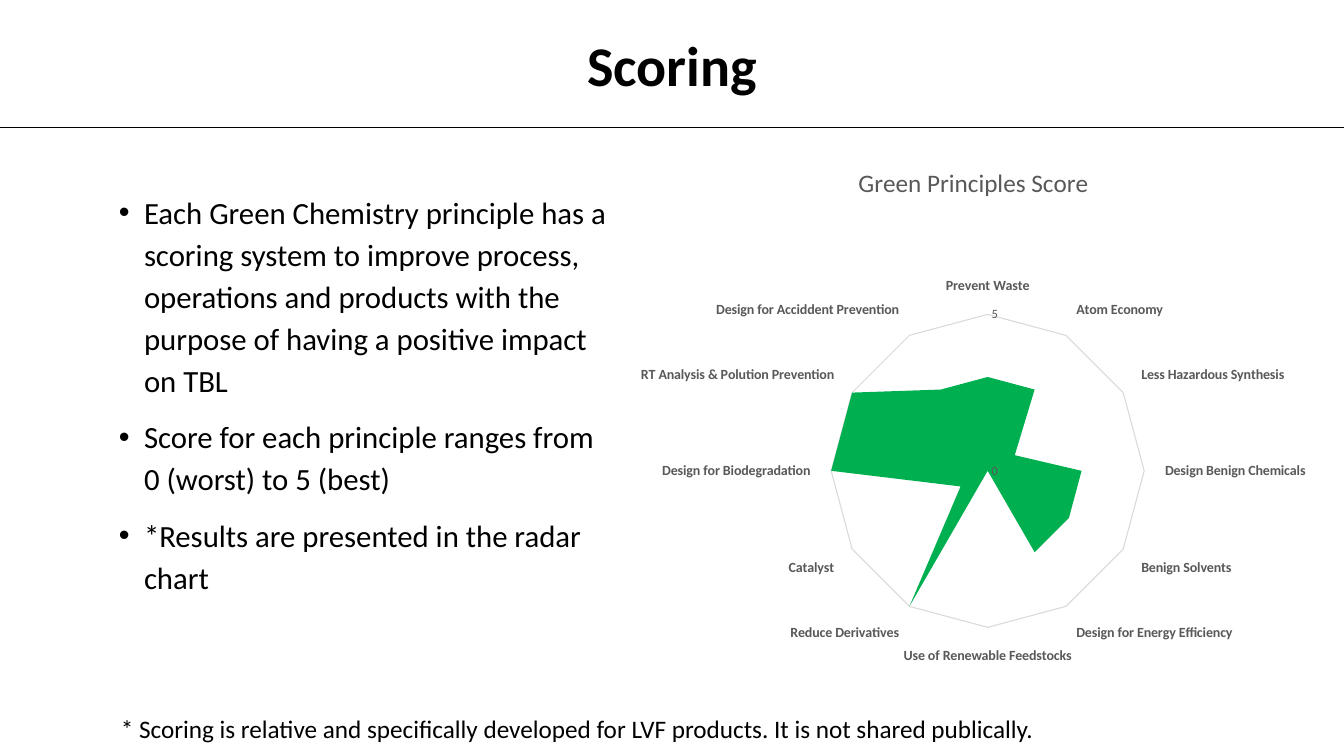
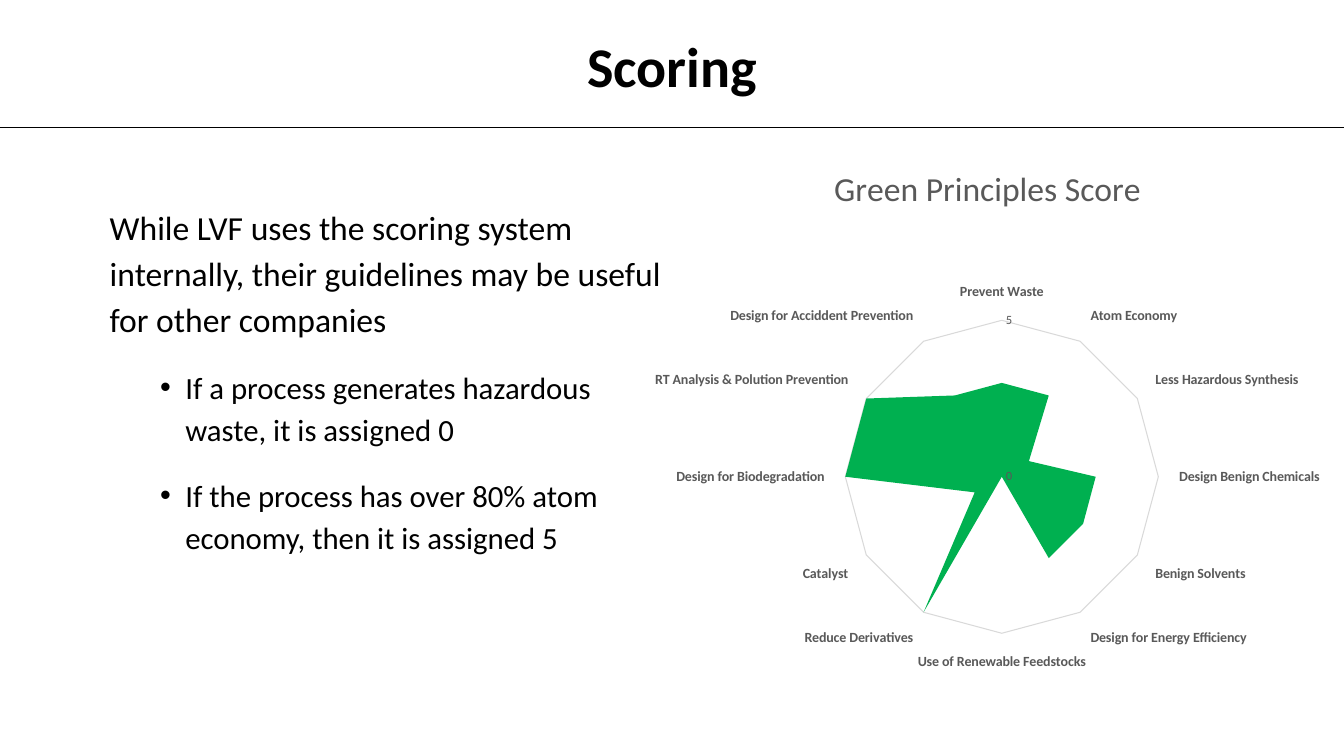
from dataclasses import dataclass

from lxml.etree import SubElement
from pptx import Presentation
from pptx.chart.data import CategoryChartData
from pptx.dml.color import RGBColor
from pptx.enum.chart import XL_CHART_TYPE as ChartType, XL_TICK_MARK as TickMark
from pptx.enum.shapes import MSO_CONNECTOR as Connector
from pptx.enum.text import MSO_ANCHOR as Anchor, MSO_AUTO_SIZE as AutoSize, PP_ALIGN as Align
from pptx.oxml import parse_xml
from pptx.oxml.ns import nsdecls, qn
from pptx.util import Inches, Pt

BLACK = RGBColor(0x00, 0x00, 0x00)
GRAY = RGBColor(0x59, 0x59, 0x59)
GRID_GRAY = RGBColor(0xD9, 0xD9, 0xD9)
GREEN = RGBColor(0x00, 0xB0, 0x50)
FONT = "Calibri"
SLIDE_WIDTH, SLIDE_HEIGHT = 13.33, 7.5

SCORES = {
    "Prevent Waste": 3,
    "Atom Economy": 3,
    "Less Hazardous Synthesis": 1,
    "Design Benign Chemicals": 3,
    "Benign Solvents": 3,
    "Design for Energy Efficiency": 3,
    "Use of Renewable Feedstocks": 0,
    "Reduce Derivatives": 5,
    "Catalyst": 1,
    "Design for Biodegradation": 5,
    "RT Analysis & Polution Prevention": 5,
    "Design for Acciddent Prevention": 3,
}


@dataclass(frozen=True)
class Point:
    """One paragraph of the body; an indent makes it a bullet."""
    text: str
    size: int = 22
    indent: float = 0
    level: int = 0
    before: int = 10


@dataclass(frozen=True)
class ScoringPage:
    """Content and placement of one scoring slide."""
    title_top: float
    body_box: tuple[float, float, float, float]
    points: tuple[Point, ...]
    chart_left: float
    chart_title_size: int
    plot_top: float
    footnote: str = ""


PAGES = (
    ScoringPage(
        title_top=0.25,
        body_box=(1.08, 1.82, 5.05, 4.76),
        points=(
            Point("Each Green Chemistry principle has a scoring system to improve process, "
                  "operations and products with the purpose of having a positive impact on TBL",
                  indent=0.25),
            Point("Score for each principle ranges from 0 (worst) to 5 (best)", indent=0.25),
            Point("*Results are presented in the radar chart", indent=0.25),
        ),
        chart_left=6.11,
        chart_title_size=18,
        plot_top=0.29,
        footnote="* Scoring is relative and specifically developed for LVF products. "
                 "It is not shared publically.",
    ),
    ScoringPage(
        title_top=0.26,
        body_box=(0.99, 1.95, 5.83, 4.76),
        points=(
            Point("While LVF uses the scoring system internally, their guidelines may be "
                  "useful for other companies", size=24),
            Point("If a process generates hazardous waste, it is assigned 0",
                  indent=0.75, level=1, before=17),
            Point("If the process has over 80% atom economy, then it is assigned 5",
                  indent=0.75, level=1, before=17),
        ),
        chart_left=6.25,
        chart_title_size=24,
        plot_top=0.3,
    ),
)


def style_font(font, size: float, color: RGBColor = BLACK, bold: bool = False) -> None:
    """Apply the deck font."""
    font.name, font.size, font.bold = FONT, Pt(size), bold
    font.color.rgb = color


def add_run(paragraph, text: str, size: float, color: RGBColor = BLACK,
            bold: bool = False) -> None:
    """Append a styled run."""
    run = paragraph.add_run()
    run.text = text
    style_font(run.font, size, color, bold)


def set_bullet(paragraph, indent: float) -> None:
    """Give a paragraph a hanging round bullet."""
    properties = paragraph._p.get_or_add_pPr()
    properties.set("marL", str(Inches(indent)))
    properties.set("indent", str(Inches(-0.25)))
    SubElement(properties, qn("a:buFont")).set("typeface", "Arial")
    SubElement(properties, qn("a:buChar")).set("char", "•")


def add_header(slide, top: float) -> None:
    """Place the title and the rule below it."""
    title = slide.shapes.title
    width = 1.91
    title.left, title.top = Inches((SLIDE_WIDTH - width) / 2), Inches(top)
    title.width, title.height = Inches(width), Inches(0.77)
    frame = title.text_frame
    frame.word_wrap = False
    frame.auto_size = AutoSize.SHAPE_TO_FIT_TEXT
    frame.vertical_anchor = Anchor.TOP
    heading = frame.paragraphs[0]
    heading.alignment = Align.CENTER
    add_run(heading, "Scoring", 40, bold=True)
    rule = slide.shapes.add_connector(
        Connector.STRAIGHT, 0, Inches(1.26), Inches(SLIDE_WIDTH), Inches(1.26))
    rule.line.color.rgb = BLACK
    rule.line.width = Pt(0.5)
    SubElement(rule._element.spPr, qn("a:effectLst"))


def add_body(slide, box: tuple[float, float, float, float], points: tuple[Point, ...]) -> None:
    """Write the explanatory paragraphs."""
    frame = slide.shapes.add_textbox(*map(Inches, box)).text_frame
    frame.word_wrap = True
    for index, point in enumerate(points):
        paragraph = frame.add_paragraph() if index else frame.paragraphs[0]
        paragraph.level = point.level
        paragraph.line_spacing = 1.14
        paragraph.space_before = Pt(point.before)
        if point.indent:
            set_bullet(paragraph, point.indent)
        add_run(paragraph, point.text, point.size)


def add_footnote(slide, text: str) -> None:
    """Write the remark at the foot of the slide."""
    frame = slide.shapes.add_textbox(*map(Inches, (1.1, 7.03, 9.27, 0.4))).text_frame
    frame.word_wrap = False
    frame.auto_size = AutoSize.SHAPE_TO_FIT_TEXT
    add_run(frame.paragraphs[0], text, 18)


def place_plot(chart, top: float) -> None:
    """Fix the inner plot area as fractions of the chart."""
    plot_area = chart._chartSpace.chart.plotArea
    for layout in plot_area.findall(qn("c:layout")):
        plot_area.remove(layout)
    bounds = {"x": 0.3, "y": top, "w": 0.44, "h": 0.53}
    fractions = "".join(f'<c:{key} val="{value}"/>' for key, value in bounds.items())
    plot_area.insert(0, parse_xml(
        f'<c:layout {nsdecls("c")}><c:manualLayout><c:layoutTarget val="inner"/>'
        f'<c:xMode val="edge"/><c:yMode val="edge"/>{fractions}</c:manualLayout></c:layout>'))


def add_score_chart(slide, left: float, title_size: int, plot_top: float) -> None:
    """Draw the filled radar of principle scores."""
    data = CategoryChartData()
    data.categories = list(SCORES)
    data.add_series("Series 1", list(SCORES.values()))
    chart = slide.shapes.add_chart(
        ChartType.RADAR_FILLED, *map(Inches, (left, 1.42, 7.09, 5.86)), data).chart
    style_font(chart.font, 10)
    chart.has_legend = False
    chart.has_title = True
    add_run(chart.chart_title.text_frame.paragraphs[0], "Green Principles Score",
            title_size, GRAY)
    chart.chart_title.include_in_layout = False

    principles, scale = chart.category_axis, chart.value_axis
    for axis in (principles, scale):
        axis.major_tick_mark = axis.minor_tick_mark = TickMark.NONE
        axis.has_major_gridlines = True
        for line in (axis.format.line, axis.major_gridlines.format.line):
            line.color.rgb = GRID_GRAY
            line.width = Pt(0.75)
    style_font(principles.tick_labels.font, 10, GRAY, bold=True)
    style_font(scale.tick_labels.font, 9, GRAY)
    scale.format.line.fill.background()
    scale.minimum_scale, scale.maximum_scale, scale.major_unit = 0, 5, 5
    scale.tick_labels.number_format = "General"
    scale.tick_labels.number_format_is_linked = False

    radar = chart.plots[0]
    radar.vary_by_categories = False
    scores = radar.series[0]
    scores.format.fill.solid()
    scores.format.fill.fore_color.rgb = GREEN
    scores.format.line.fill.background()
    place_plot(chart, plot_top)


def main() -> None:
    """Build the scoring slides."""
    deck = Presentation()
    deck.slide_width, deck.slide_height = Inches(SLIDE_WIDTH), Inches(SLIDE_HEIGHT)
    title_only = deck.slide_layouts[5]
    for page in PAGES:
        slide = deck.slides.add_slide(title_only)
        add_header(slide, page.title_top)
        add_body(slide, page.body_box, page.points)
        add_score_chart(slide, page.chart_left, page.chart_title_size, page.plot_top)
        if page.footnote:
            add_footnote(slide, page.footnote)
    deck.save("out.pptx")


if __name__ == "__main__":
    main()
